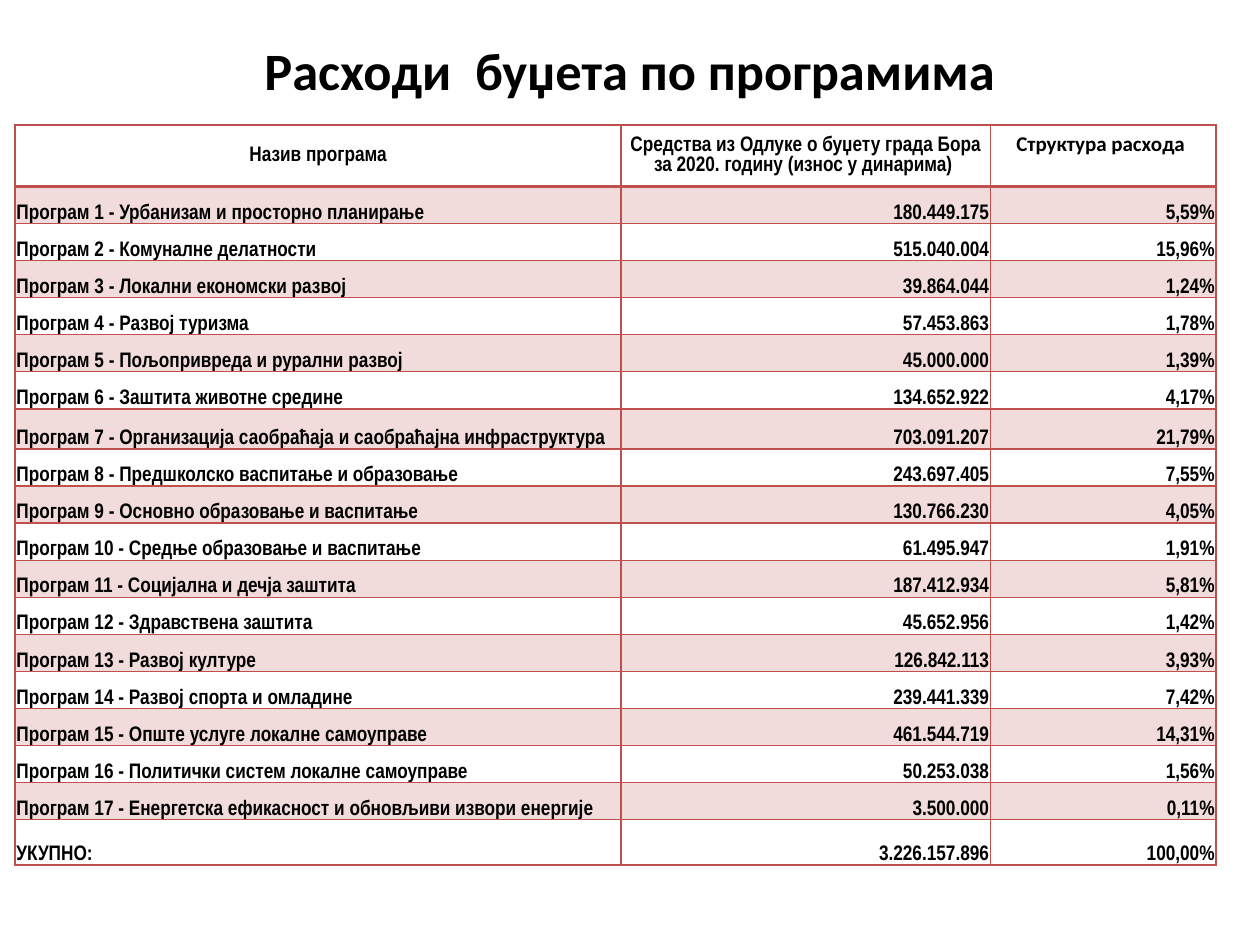
from lxml.etree import SubElement
from pptx import Presentation
from pptx.dml.color import RGBColor
from pptx.enum.text import MSO_ANCHOR as Anchor, PP_ALIGN as Align
from pptx.oxml.ns import qn
from pptx.util import Inches, Pt

TITLE = "Расходи  буџета по програмима"
HEADERS = (
    "Назив програма",
    "Средства из Одлуке о буџету града Бора за 2020. годину (износ у динарима) ",
    "Структура расхода ",
)
PROGRAMS = [
    ("Урбанизам и просторно планирање", "180.449.175", "5,59%"),
    ("Комуналне делатности", "515.040.004", "15,96%"),
    ("Локални економски развој", "39.864.044", "1,24%"),
    ("Развој туризма", "57.453.863", "1,78%"),
    ("Пољопривреда и рурални развој", "45.000.000", "1,39%"),
    ("Заштита животне средине", "134.652.922", "4,17%"),
    ("Организација саобраћаја и саобраћајна инфраструктура", "703.091.207", "21,79%"),
    ("Предшколско васпитање и образовање", "243.697.405", "7,55%"),
    ("Основно образовање и васпитање", "130.766.230", "4,05%"),
    ("Средње образовање и васпитање", "61.495.947", "1,91%"),
    ("Социјална и дечја заштита", "187.412.934", "5,81%"),
    ("Здравствена заштита", "45.652.956", "1,42%"),
    ("Развој културе", "126.842.113", "3,93%"),
    ("Развој спорта и омладине", "239.441.339", "7,42%"),
    ("Опште услуге локалне самоуправе", "461.544.719", "14,31%"),
    ("Политички систем локалне самоуправе", "50.253.038", "1,56%"),
    ("Енергетска ефикасност и обновљиви извори енергије", "3.500.000", "0,11%"),
]
TOTAL = ("УКУПНО:", "3.226.157.896", "100,00%")

RED = "C0504D"
BLACK = "000000"
BAND_OPACITY = 20
TABLE_BOX = (0.12, 0.99, 9.53, 5.88)
COLUMN_WIDTHS = (4.81, 2.93, 1.79)
TIGHT_MARGINS = (0.01, 0.01, 0.01, 0)
WIDE_MARGINS = (0.1, 0.05, 0.1, 0.05)


def color(hex_code):
    """Turn a hex string into a colour."""
    return RGBColor.from_string(hex_code)


def style_paragraph(paragraph, align, font_name, size):
    """Set alignment and the bold black font of a paragraph."""
    paragraph.alignment = align
    font = paragraph.font
    font.name, font.size, font.bold = font_name, Pt(size), True
    font.color.rgb = color(BLACK)


def set_borders(cell, top, bottom):
    """Draw red borders round a cell, with top and bottom widths in points."""
    properties = cell._tc.get_or_add_tcPr()
    for side, width in (("L", 1), ("R", 1), ("T", top), ("B", bottom)):
        line = SubElement(properties, qn(f"a:ln{side}"), w=str(Pt(width)))
        fill = SubElement(line, qn("a:solidFill"))
        SubElement(fill, qn("a:srgbClr"), val=RED)


def set_fill(cell, banded):
    """Give a banded cell a translucent red fill and clear any other."""
    if not banded:
        cell.fill.background()
        return
    cell.fill.solid()
    cell.fill.fore_color.rgb = color(RED)
    shade = cell._tc.tcPr.find(f".//{qn('a:solidFill')}[last()]")
    shade = cell._tc.tcPr.find(qn("a:solidFill")).find(qn("a:srgbClr"))
    SubElement(shade, qn("a:alpha"), val=str(BAND_OPACITY * 1000))


def fill_cell(cell, text, row, column):
    """Write one table cell with the look of its row and column."""
    is_header = row == 0
    is_share_header = is_header and column == 2
    margins = WIDE_MARGINS if is_share_header else TIGHT_MARGINS
    cell.margin_left, cell.margin_top, cell.margin_right, cell.margin_bottom = map(Inches, margins)
    if is_header:
        align = Align.CENTER
        cell.vertical_anchor = Anchor.TOP if is_share_header else Anchor.MIDDLE
    else:
        align = Align.RIGHT if column else Align.LEFT
        cell.vertical_anchor = Anchor.BOTTOM
    cell.text = text
    font_name = "Calibri" if is_share_header else "Arial Narrow"
    style_paragraph(cell.text_frame.paragraphs[0], align, font_name, 12)
    set_borders(cell, top=2 if row == 1 else 1, bottom=2 if is_header else 1)
    set_fill(cell, banded=row % 2 == 1)


def add_title(slide):
    """Add the centred slide title."""
    shape = slide.shapes.add_textbox(*map(Inches, (0.74, 0.13, 8.52, 0.85)))
    frame = shape.text_frame
    frame.word_wrap = True
    frame.vertical_anchor = Anchor.MIDDLE
    frame.text = TITLE
    style_paragraph(frame.paragraphs[0], Align.CENTER, "Calibri", 30)


def add_budget_table(slide):
    """Add the table of programme expenses."""
    programs = [
        (f"Програм {number} - {name}", amount, share)
        for number, (name, amount, share) in enumerate(PROGRAMS, 1)
    ]
    rows = [HEADERS, *programs, TOTAL]
    special_heights = {0: 0.49, 7: 0.32, len(rows) - 1: 0.36}
    spare = TABLE_BOX[3] - sum(special_heights.values())
    row_height = spare / (len(rows) - len(special_heights))

    table = slide.shapes.add_table(len(rows), len(HEADERS), *map(Inches, TABLE_BOX)).table
    table.first_row = table.horz_banding = False
    for column, width in zip(table.columns, COLUMN_WIDTHS):
        column.width = Inches(width)
    for row, texts in enumerate(rows):
        table.rows[row].height = Inches(special_heights.get(row, row_height))
        for column, text in enumerate(texts):
            fill_cell(table.cell(row, column), text, row, column)


def main():
    """Build and save the slide."""
    presentation = Presentation()
    presentation.slide_width, presentation.slide_height = Inches(10), Inches(7.5)
    slide = presentation.slides.add_slide(presentation.slide_layouts[6])
    add_title(slide)
    add_budget_table(slide)
    presentation.save("out.pptx")


if __name__ == "__main__":
    main()
